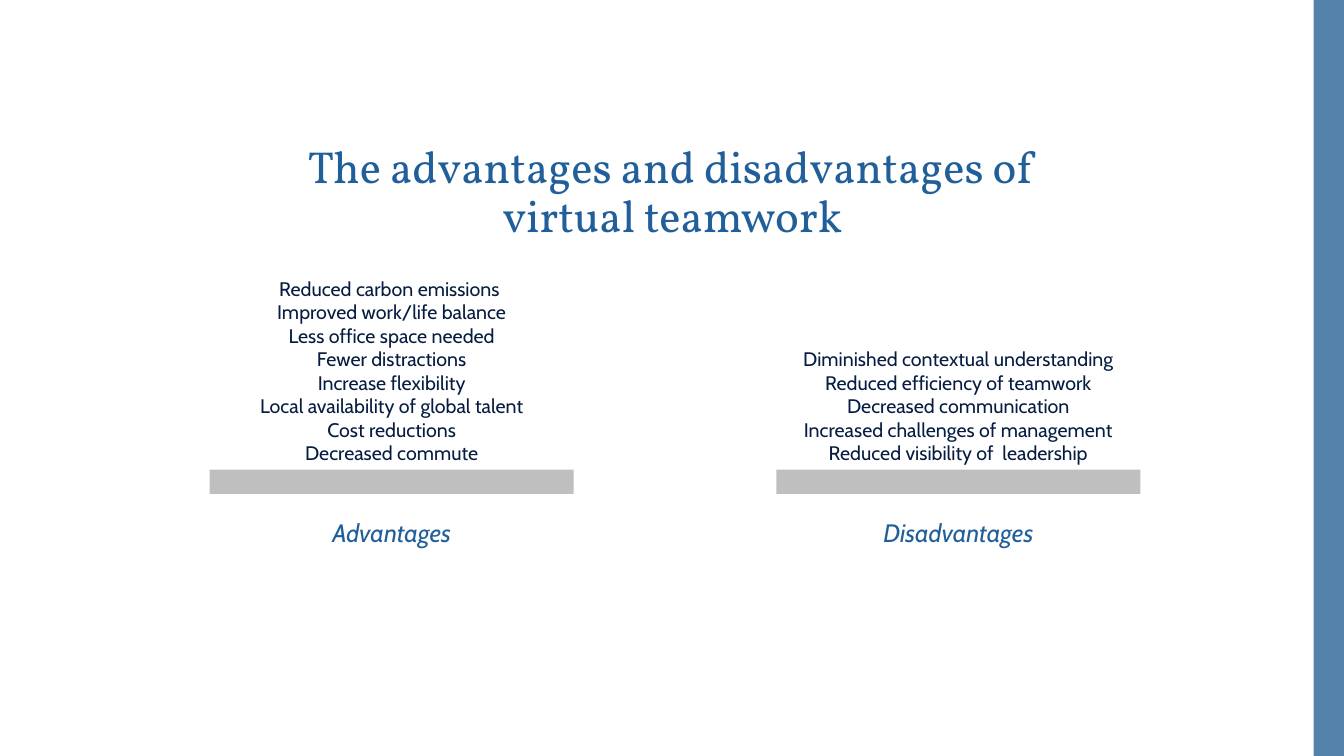
from dataclasses import dataclass

from lxml.etree import SubElement
from pptx import Presentation
from pptx.dml.color import RGBColor
from pptx.enum.shapes import MSO_SHAPE
from pptx.enum.text import MSO_ANCHOR, MSO_AUTO_SIZE, PP_ALIGN
from pptx.oxml.ns import qn
from pptx.slide import Slide
from pptx.util import Inches, Pt


@dataclass(frozen=True)
class Theme:
    heading: RGBColor = RGBColor(0x21, 0x5F, 0x9A)
    body: RGBColor = RGBColor(0x06, 0x1D, 0x41)
    shelf: RGBColor = RGBColor(0xBF, 0xBF, 0xBF)
    side_band: RGBColor = RGBColor(0x54, 0x82, 0xAB)
    title_font: str = "Vollkorn"
    body_font: str = "Cabin"
    title_size: int = 32
    label_size: int = 18
    list_size: int = 14


@dataclass(frozen=True)
class Area:
    left: float
    top: float
    width: float
    height: float


@dataclass(frozen=True)
class TextStyle:
    font: str
    size: int
    color: RGBColor
    italic: bool = False
    line_spacing: float = 1.0


@dataclass(frozen=True)
class Column:
    label: str
    items: tuple[str, ...]
    shelf_left: float
    label_index: int
    list_index: int


THEME = Theme()
TITLE_STYLE = TextStyle(THEME.title_font, THEME.title_size, THEME.heading, line_spacing=0.9)
LABEL_STYLE = TextStyle(THEME.body_font, THEME.label_size, THEME.heading, italic=True)
LIST_STYLE = TextStyle(THEME.body_font, THEME.list_size, THEME.body)

SHELF_TOP, SHELF_WIDTH, SHELF_HEIGHT = 4.66, 3.61, 0.24
LIST_WIDTH, LIST_HEIGHT = 4.23, 1.99
LABEL_TOP, LABEL_HEIGHT = 5.08, 0.4

COLUMNS = (
    Column(
        "Advantages",
        (
            "Reduced carbon emissions ",
            "Improved work/life balance",
            "Less office space needed",
            "Fewer distractions",
            "Increase flexibility",
            "Local availability of global talent",
            "Cost reductions",
            "Decreased commute",
        ),
        shelf_left=2.08, label_index=1, list_index=2,
    ),
    Column(
        "Disadvantages",
        (
            "Diminished contextual understanding",
            "Reduced efficiency of teamwork",
            "Decreased communication",
            "Increased challenges of management",
            "Reduced visibility of  leadership",
        ),
        shelf_left=7.7, label_index=3, list_index=4,
    ),
)


def add_bar(page: Slide, area: Area, color: RGBColor) -> None:
    bar = page.shapes.add_shape(
        MSO_SHAPE.RECTANGLE,
        Inches(area.left), Inches(area.top), Inches(area.width), Inches(area.height),
    )
    bar.shadow.inherit = False
    bar.fill.solid()
    bar.fill.fore_color.rgb = color
    bar.line.fill.background()


def fill_placeholder(page: Slide, index: int, area: Area, lines: tuple[str, ...],
                     style: TextStyle, anchor: MSO_ANCHOR) -> None:
    box = next(holder for holder in page.placeholders
               if holder.placeholder_format.idx == index)
    box.left, box.top = Inches(area.left), Inches(area.top)
    box.width, box.height = Inches(area.width), Inches(area.height)
    frame = box.text_frame
    frame.word_wrap = True
    frame.auto_size = MSO_AUTO_SIZE.NONE
    frame.vertical_anchor = anchor
    for number, line in enumerate(lines):
        para = frame.paragraphs[0] if number == 0 else frame.add_paragraph()
        para.alignment = PP_ALIGN.CENTER
        para.line_spacing = style.line_spacing
        para.space_before = para.space_after = Pt(0)
        # Switch off the template's bullet and hanging indent
        properties = para._p.get_or_add_pPr()
        properties.set("marL", "0")
        properties.set("indent", "0")
        SubElement(properties, qn("a:buNone"))
        span = para.add_run()
        span.text = line
        span.font.name = style.font
        span.font.size = Pt(style.size)
        span.font.color.rgb = style.color
        span.font.bold = False
        span.font.italic = style.italic


def add_column(page: Slide, column: Column) -> None:
    # The list stands on the shelf and the label hangs below it
    add_bar(page, Area(column.shelf_left, SHELF_TOP, SHELF_WIDTH, SHELF_HEIGHT), THEME.shelf)
    list_left = column.shelf_left + (SHELF_WIDTH - LIST_WIDTH) / 2
    fill_placeholder(
        page, column.list_index,
        Area(list_left, SHELF_TOP - LIST_HEIGHT, LIST_WIDTH, LIST_HEIGHT),
        column.items, LIST_STYLE, MSO_ANCHOR.BOTTOM,
    )
    fill_placeholder(
        page, column.label_index,
        Area(column.shelf_left, LABEL_TOP, SHELF_WIDTH, LABEL_HEIGHT),
        (column.label,), LABEL_STYLE, MSO_ANCHOR.TOP,
    )


def main() -> None:
    deck = Presentation()
    deck.slide_width, deck.slide_height = Inches(13.33), Inches(7.5)
    page = deck.slides.add_slide(deck.slide_layouts.get_by_name("Comparison"))

    # Side band
    add_bar(page, Area(13.03, 0, 0.3, 7.5), THEME.side_band)

    # Title
    fill_placeholder(
        page, 0, Area(2.35, 1.39, 8.64, 1.45),
        ("The advantages and disadvantages of virtual teamwork",),
        TITLE_STYLE, MSO_ANCHOR.TOP,
    )

    # Two columns
    for column in COLUMNS:
        add_column(page, column)

    deck.save("out.pptx")


if __name__ == "__main__":
    main()
